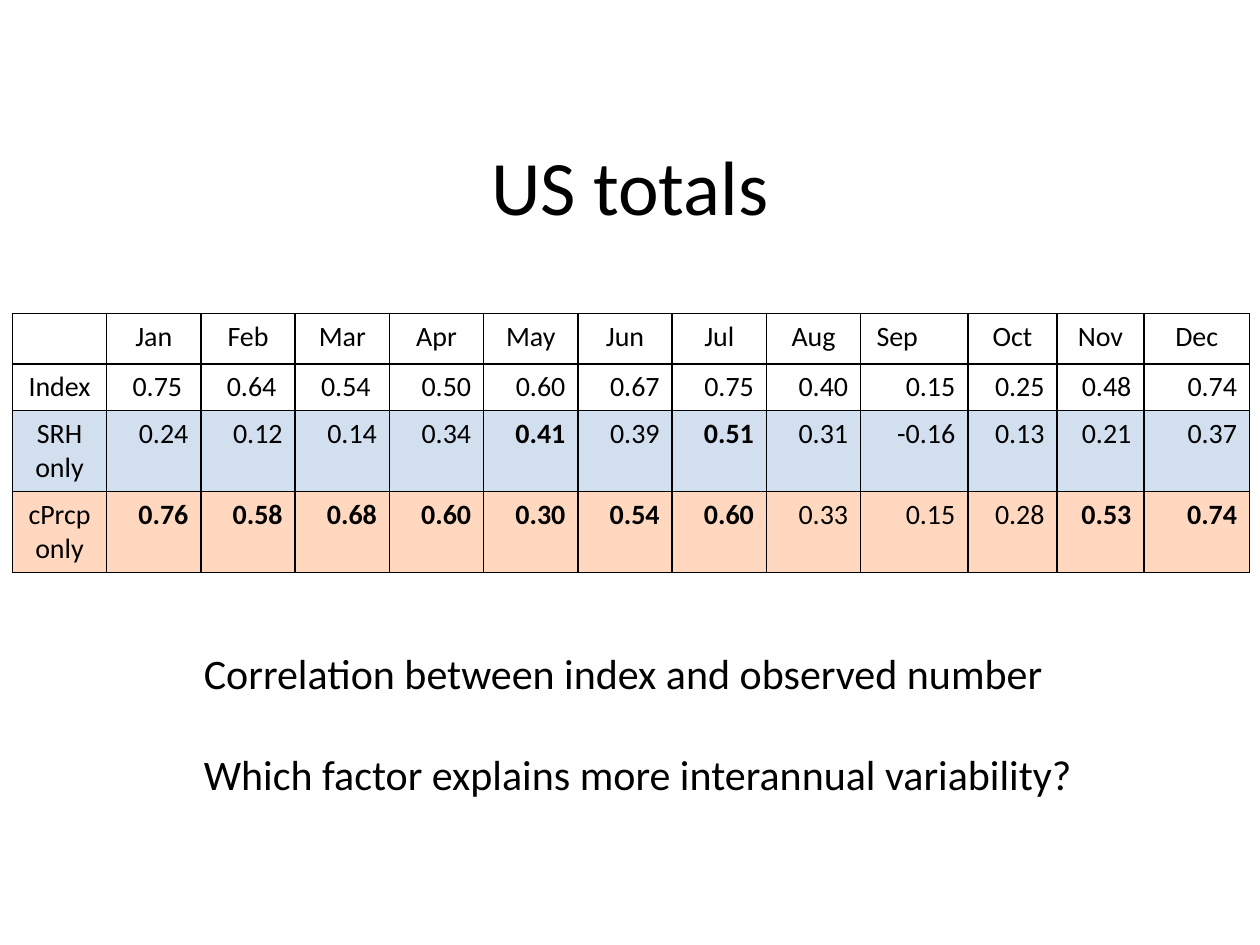
from lxml.etree import SubElement
from pptx import Presentation
from pptx.dml.color import RGBColor
from pptx.enum.text import MSO_ANCHOR, MSO_AUTO_SIZE, PP_ALIGN
from pptx.oxml.ns import qn
from pptx.util import Cm, Pt

COLOURS = {"text": "000000", "border": "000000", "srh": "4F81BD", "precipitation": "FF6600"}

MONTHS = "Jan Feb Mar Apr May Jun Jul Aug Sep Oct Nov Dec".split()
# Label lines, fill colour, values; an asterisk marks a bold value
ROWS = [
    ([""], None, MONTHS),
    (["Index"], None,
     "0.75 0.64 0.54 0.50 0.60 0.67 0.75 0.40 0.15 0.25 0.48 0.74".split()),
    (["SRH only"], "srh",
     "0.24 0.12 0.14 0.34 *0.41 0.39 *0.51 0.31 -0.16 0.13 0.21 0.37".split()),
    (["cPrcp", "only"], "precipitation",
     "*0.76 *0.58 *0.68 *0.60 *0.30 *0.54 *0.60 0.33 0.15 0.28 *0.53 *0.74".split()),
]
COLUMN_WIDTHS = [1.9] * 9 + [2.16, 1.8, 1.75, 2.13]
ROW_HEIGHTS = [0.94, 0.94, 1.63, 1.63]
# Wider right margins, by row and column
RIGHT_MARGINS = {(0, 9): 0.94, (1, 1): 0.38, (1, 2): 0.38, (1, 3): 0.38}


class SlideBuilder:
    font = "Calibri"
    fill_alpha = 25

    def __init__(self, slide):
        self.slide = slide

    def add_run(self, paragraph, text, size, bold=False):
        run = paragraph.add_run()
        run.text = text
        run.font.name = self.font
        run.font.size = Pt(size)
        run.font.bold = bold
        run.font.color.rgb = RGBColor.from_string(COLOURS["text"])

    def add_text(self, box, lines, size, align=PP_ALIGN.LEFT, anchor=MSO_ANCHOR.TOP,
                 wrap=True, gap=0):
        frame = self.slide.shapes.add_textbox(*map(Cm, box)).text_frame
        frame.word_wrap = wrap
        frame.vertical_anchor = anchor
        if not wrap:
            frame.auto_size = MSO_AUTO_SIZE.SHAPE_TO_FIT_TEXT
        for number, line in enumerate(lines):
            paragraph = frame.add_paragraph() if number else frame.paragraphs[0]
            paragraph.alignment = align
            paragraph.space_before = Pt(gap if number else 0)
            self.add_run(paragraph, line, size)

    def style_cell(self, cell, fill):
        properties = cell._tc.get_or_add_tcPr()
        for side in ("a:lnL", "a:lnR", "a:lnT", "a:lnB"):
            line = SubElement(properties, qn(side), w=str(Pt(1)))
            solid = SubElement(line, qn("a:solidFill"))
            SubElement(solid, qn("a:srgbClr"), val=COLOURS["border"])
        if fill is None:
            cell.fill.background()
            return
        cell.fill.solid()
        cell.fill.fore_color.rgb = RGBColor.from_string(COLOURS[fill])
        colour = properties.find(qn("a:solidFill")).find(qn("a:srgbClr"))
        SubElement(colour, qn("a:alpha"), val=str(self.fill_alpha * 1000))

    def add_table(self, left, top, rows, widths, heights, size):
        table = self.slide.shapes.add_table(
            len(rows), len(widths), Cm(left), Cm(top),
            Cm(sum(widths)), Cm(sum(heights))).table
        table.first_row = table.horz_banding = False
        for column, width in zip(table.columns, widths):
            column.width = Cm(width)
        for row, height in zip(table.rows, heights):
            row.height = Cm(height)
        for i, (label, fill, values) in enumerate(rows):
            for j, lines in enumerate([label] + [[value] for value in values]):
                cell = table.cell(i, j)
                self.style_cell(cell, fill)
                if (i, j) in RIGHT_MARGINS:
                    cell.margin_right = Cm(RIGHT_MARGINS[i, j])
                paragraph = cell.text_frame.paragraphs[0]
                paragraph.alignment = PP_ALIGN.RIGHT if i and j else PP_ALIGN.CENTER
                for number, line in enumerate(lines):
                    if number:
                        paragraph.add_line_break()
                    if line:
                        self.add_run(paragraph, line.lstrip("*"), size, line.startswith("*"))


def main():
    presentation = Presentation()
    presentation.slide_width, presentation.slide_height = Cm(25.4), Cm(19.05)
    builder = SlideBuilder(presentation.slides.add_slide(presentation.slide_layouts[6]))

    # Title
    builder.add_text((1.27, 2.13, 22.86, 3.18), ["US totals"], 44,
                     PP_ALIGN.CENTER, MSO_ANCHOR.MIDDLE)

    # Monthly correlations
    builder.add_table(0.25, 6.32, ROWS, COLUMN_WIDTHS, ROW_HEIGHTS, 16)

    # Explanation and question
    builder.add_text((3.86, 12.93, 18.29, 3.33),
                     ["Correlation between index and observed number",
                      "Which factor explains more interannual variability?"],
                     24, wrap=False, gap=29)

    presentation.save("out.pptx")


if __name__ == "__main__":
    main()
